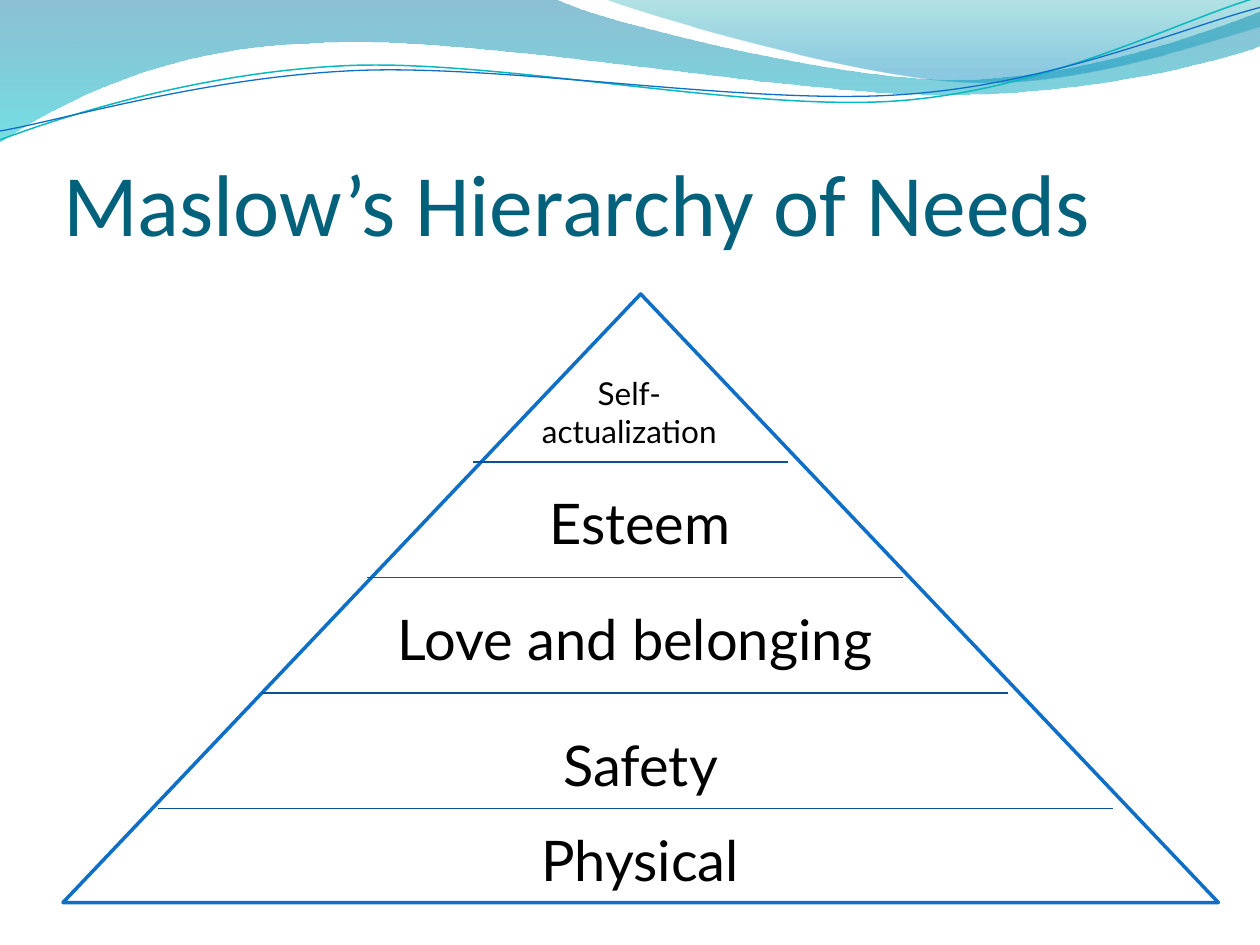
from math import cos, radians, sin

from lxml.etree import SubElement
from pptx import Presentation
from pptx.dml.color import RGBColor
from pptx.enum.shapes import MSO_CONNECTOR, MSO_SHAPE
from pptx.enum.text import MSO_ANCHOR, MSO_AUTO_SIZE, PP_ALIGN
from pptx.oxml.ns import qn
from pptx.util import Inches, Pt

WHITE = RGBColor(0xFF, 0xFF, 0xFF)
BLACK = RGBColor(0x00, 0x00, 0x00)
TITLE_TEAL = RGBColor(0x04, 0x61, 0x7B)
BLUE = RGBColor(0x0F, 0x6F, 0xC6)
DARK_BLUE = RGBColor(0x09, 0x52, 0x95)
AQUA = RGBColor(0x0A, 0xB8, 0xBF)
DEEP_TEAL = RGBColor(0x00, 0x74, 0xA1)
BRIGHT_TEAL = RGBColor(0x00, 0xC6, 0xCF)
SEA_GREEN = RGBColor(0x00, 0xA1, 0xA9)
SKY_BLUE = RGBColor(0x00, 0x8B, 0xBF)
WAVE_TILT = 2.7


def add_outline(start, segments, close):
    """Draw segments of one point (straight) or three points (Bezier curve)."""
    points = [(Inches(x), Inches(y)) for segment in segments for x, y in segment]
    builder = slide.shapes.build_freeform(Inches(start[0]), Inches(start[1]))
    builder.add_line_segments(points, close=close)
    outline = builder.convert_to_shape()
    outline.shadow.inherit = False
    steps = iter(list(outline._element.iter(qn("a:lnTo"))))
    for segment in segments:
        members = [next(steps) for _ in segment]
        if len(members) == 3:
            members[0].tag
            curve = members[0].getparent().makeelement(qn("a:cubicBezTo"))
            members[0].addprevious(curve)
            for member in members:
                curve.append(member[0])
                member.getparent().remove(member)
    return outline


def untilt(point, center):
    """Turn a point clockwise, so that the shape's rotation brings it back."""
    angle = radians(WAVE_TILT)
    dx, dy = point[0] - center[0], point[1] - center[1]
    return (center[0] + dx * cos(angle) - dy * sin(angle),
            center[1] + dx * sin(angle) + dy * cos(angle))


prs = Presentation()
prs.slide_width, prs.slide_height = Inches(10), Inches(7.5)
slide = prs.slides.add_slide(prs.slide_layouts[5])

# Waves across the top: filled bands, then thin lines
left_band = [
    [(4.4, -0.01)],
    [(4.76, 0.17), (6.64, 0.63), (7.58, 0.63)],
    [(8.53, 0.63), (9.58, 0.26), (10, 0.09)],
    [(10.01, 0.36)],
    [(9.83, 0.44), (8.7, 0.76), (7.46, 0.75)],
    [(6.22, 0.75), (3.82, 0.28), (2.57, 0.34)],
    [(1.29, 0.36), (0.46, 0.83), (-0.01, 1.13)],
]
right_band = [
    [(5.09, 0.11), (6.82, 0.62), (7.69, 0.65)],
    [(8.56, 0.69), (9.61, 0.32), (10, 0.21)],
    [(10, 0)],
]
bands = [
    ((0, 0), left_band, [(0, DEEP_TEAL, 45), (1, BRIGHT_TEAL, 55)]),
    ((4.79, -0.01), right_band, [(0, SEA_GREEN, 30), (0.8, SKY_BLUE, 45)]),
]
for start, segments, stops in bands:
    band = add_outline(start, segments, close=True)
    band.line.fill.background()
    band.fill.gradient()
    band.fill.gradient_angle = 270
    for stop, (position, color, _) in zip(band.fill.gradient_stops, stops):
        stop.position = position
        stop.color.rgb = color
    for color_xml, (_, _, opacity) in zip(band._element.spPr.iter(qn("a:srgbClr")), stops):
        SubElement(color_xml, qn("a:alpha"), val=str(opacity * 1000))

wave_lines = [
    ((4.99, 0.58), AQUA, 0.85,
     [(0, 1.11), (0.48, 0.93), (1.58, 0.57), (2.77, 0.52), (3.95, 0.47),
      (5.93, 0.89), (7.13, 0.8), (8.33, 0.71), (9.38, 0.15), (9.98, -0.02)]),
    ((5, 0.59), BLUE, 0.75,
     [(0, 1.04), (0.47, 0.96), (1.64, 0.61), (2.83, 0.56), (4.03, 0.51),
      (5.97, 0.84), (7.17, 0.75), (8.36, 0.67), (9.41, 0.21), (10, 0.06)]),
]
for center, color, width, points in wave_lines:
    start, *rest = [untilt(point, center) for point in points]
    wave = add_outline(start, [rest[i:i + 3] for i in range(0, len(rest), 3)], close=False)
    wave.rotation = 360 - WAVE_TILT
    wave.fill.background()
    wave.line.color.rgb = color
    wave.line.width = Pt(width)

# Title
title = slide.shapes.title
title.left, title.top = Inches(0.5), Inches(0.77)
title.width, title.height = Inches(9), Inches(1.25)
title.text_frame.text = "Maslow’s Hierarchy of Needs"
title_format = {
    "auto_size": MSO_AUTO_SIZE.NONE, "vertical_anchor": MSO_ANCHOR.BOTTOM,
    "margin_left": 0, "margin_top": Inches(0.05), "margin_right": 0, "margin_bottom": 0,
}
for attribute, value in title_format.items():
    setattr(title.text_frame, attribute, value)
heading = title.text_frame.paragraphs[0]
heading.alignment = PP_ALIGN.LEFT
heading.font.name = "Calibri"
heading.font.size = Pt(50)
heading.font.color.rgb = TITLE_TEAL

# Pyramid and the lines between its levels
pyramid = slide.shapes.add_shape(
    MSO_SHAPE.ISOSCELES_TRIANGLE, Inches(0.5), Inches(7 / 3), Inches(9.17), Inches(4.83))
pyramid.shadow.inherit = False
pyramid.fill.solid()
pyramid.fill.fore_color.rgb = WHITE
pyramid.line.color.rgb = BLUE
pyramid.line.width = Pt(2)

for level, right in enumerate([6.25, 7.17, 8, 8.83]):
    left = Inches(3.75 - level * 5 / 6)
    y = Inches((44 + level * 11) / 12)
    divider = slide.shapes.add_connector(MSO_CONNECTOR.STRAIGHT, left, y, Inches(right), y)
    divider.line.color.rgb = DARK_BLUE
    divider.line.width = Pt(0.75)
    SubElement(divider._element.spPr, qn("a:effectLst"))

# Needs, from the base up
needs = [
    ("Physical", 1.08, 6.5, 8, 0.64, 32),
    ("Safety", 1.92, 5.75, 6.33, 0.64, 32),
    ("Love and belonging", 2.75, 4.75, 4.58, 0.64, 32),
    ("Esteem", 3.58, 3.83, 3, 0.64, 32),
    ("Self-actualization", 4.08, 2.92, 1.83, 0.71, 18),
]
for need, left, top, width, height, size in needs:
    label = slide.shapes.add_textbox(Inches(left), Inches(top), Inches(width), Inches(height))
    label.text_frame.word_wrap = True
    label.text_frame.auto_size = MSO_AUTO_SIZE.SHAPE_TO_FIT_TEXT
    label.text_frame.text = need
    paragraph = label.text_frame.paragraphs[0]
    paragraph.alignment = PP_ALIGN.CENTER
    paragraph.font.name = "Lato"
    paragraph.font.size = Pt(size)
    paragraph.font.color.rgb = BLACK

prs.save("out.pptx")
